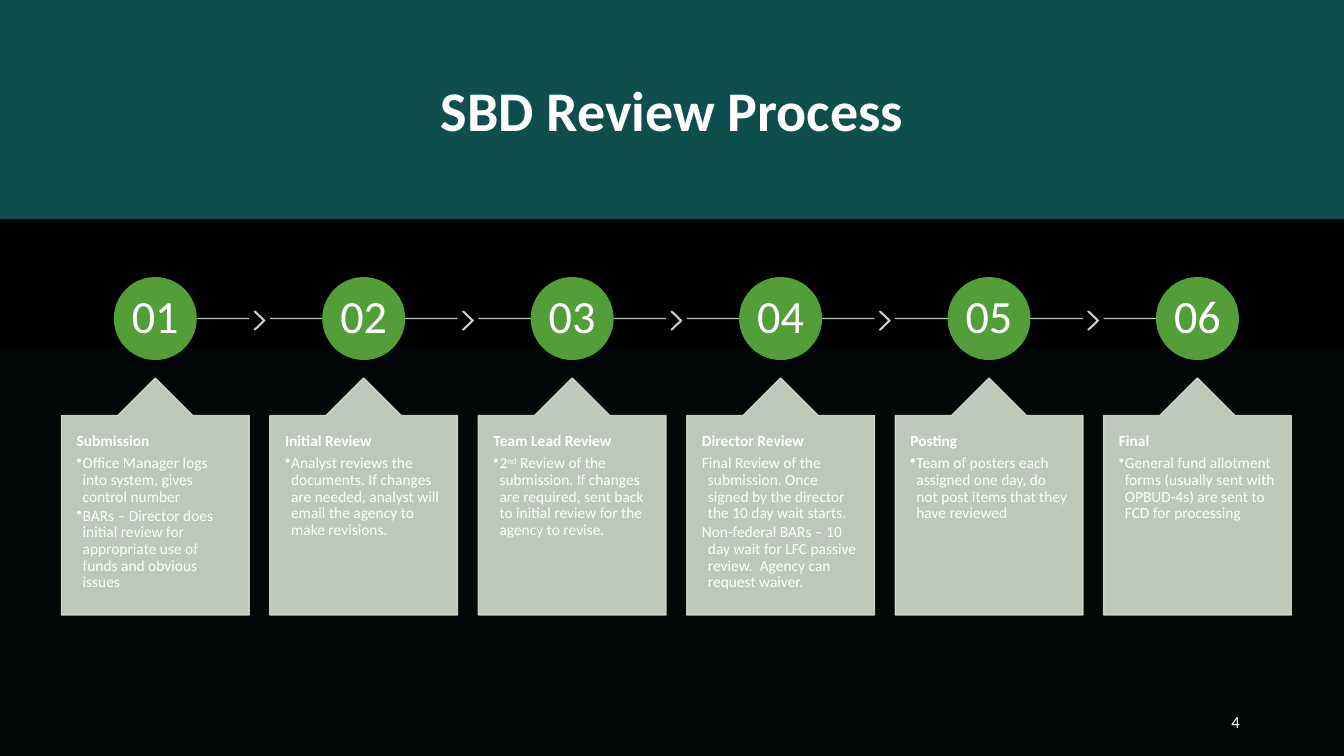
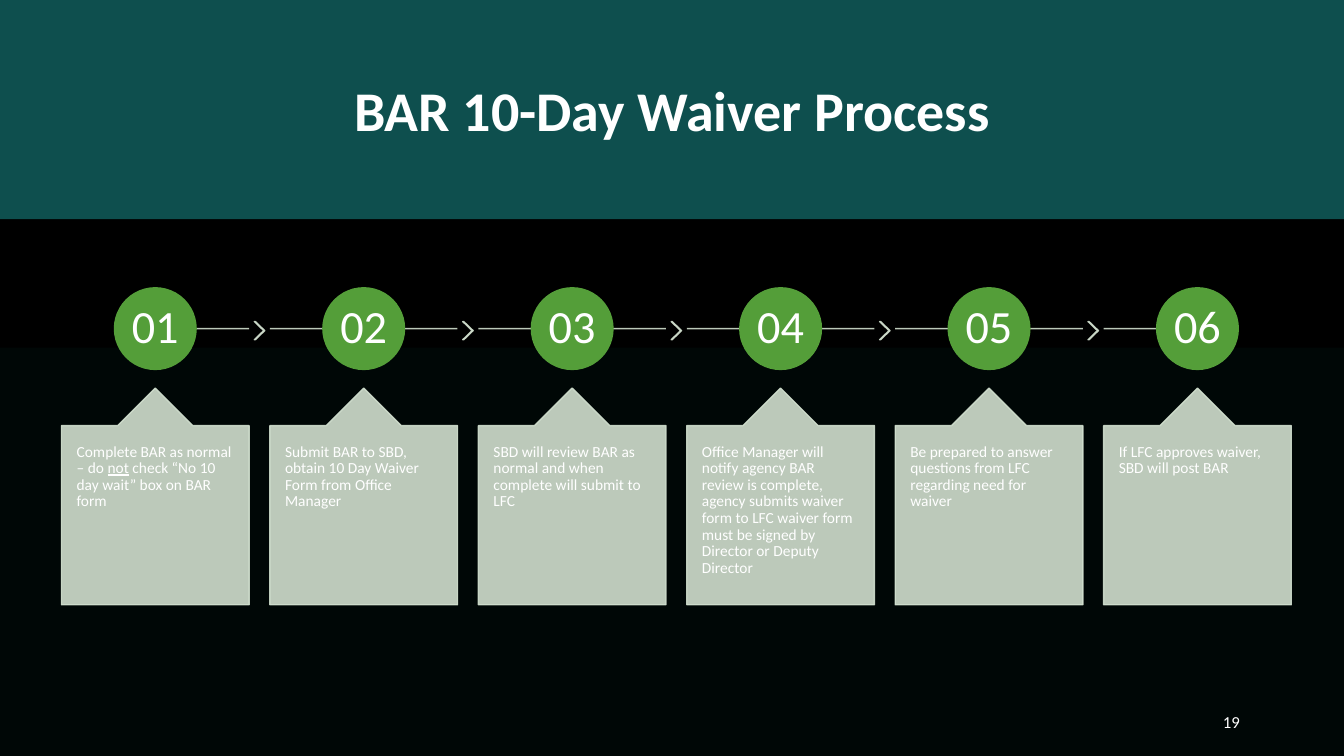
from lxml import etree
from pptx import Presentation
from pptx.dml.color import RGBColor
from pptx.enum.shapes import MSO_CONNECTOR, MSO_SHAPE
from pptx.enum.text import MSO_ANCHOR, PP_ALIGN
from pptx.oxml.ns import qn
from pptx.util import Inches, Pt

RECT, OVAL = MSO_SHAPE.RECTANGLE, MSO_SHAPE.OVAL
CHEVRON, CALLOUT = MSO_SHAPE.CHEVRON, MSO_SHAPE.UP_ARROW_CALLOUT
LINE = MSO_CONNECTOR.STRAIGHT
TOP, MIDDLE = MSO_ANCHOR.TOP, MSO_ANCHOR.MIDDLE
LEFT, CENTER, RIGHT = PP_ALIGN.LEFT, PP_ALIGN.CENTER, PP_ALIGN.RIGHT

FONT = "Calibri"
BLACK, WHITE, TEAL = "000000", "FFFFFF", "0E4F4E"
TINT, GREEN, SAGE = "017058", "549E39", "D1DFCE"

deck = Presentation()
deck.slide_width, deck.slide_height = Inches(13.333), Inches(7.5)
W, H = deck.slide_width, deck.slide_height
COLS = 6
START, END = Inches(0.61), Inches(12.81)
PITCH = (END - START) / (COLS - 0.1)
CARD = 0.9 * PITCH
GAP = PITCH - CARD
DISC = Inches(0.81)


def paint(shape, color, alpha=100, line=True):
    if line:
        shape.line.color.rgb = RGBColor.from_string(color)
        shape.line.width = Pt(1)
    if hasattr(shape, "fill"):
        shape.fill.solid()
        shape.fill.fore_color.rgb = RGBColor.from_string(color)
        shape.shadow.inherit = False
        if not line:
            shape.line.fill.background()
    props = shape._element.spPr
    if alpha < 100:
        for node in props.iter(qn("a:srgbClr")):
            etree.SubElement(node, qn("a:alpha")).set("val", str(alpha * 1000))
    if not hasattr(shape, "fill"):
        etree.SubElement(props, qn("a:effectLst"))


def write(shape, texts, size, align, anchor=MIDDLE, inset=(0.1, 0.05), space=0.9, mark=None):
    frame = shape.text_frame
    frame.word_wrap = True
    frame.vertical_anchor = anchor
    frame.margin_left = frame.margin_right = Inches(inset[0])
    frame.margin_top = frame.margin_bottom = Inches(inset[1])
    frame.text = "\n".join(text.replace("|", "") for text, bold in texts)
    for para, (text, bold) in zip(frame.paragraphs, texts):
        para.alignment = align
        para.line_spacing = space
        if "|" in text:
            para.text = ""
            for place, part in enumerate(text.split("|")):
                run = para.add_run()
                run.text = part
                if place % 2:
                    run.font._element.set(*mark)
        for run in para.runs:
            run.font.name = FONT
            run.font.size = Pt(size)
            run.font.bold = bold
            run.font.color.rgb = RGBColor.from_string(WHITE)


PAGES = [
    ("SBD Review Process", "4", 3.16, ("baseline", "30000"), [
        ("Submission", "•", [
            "Office Manager logs into system, gives control number",
            "BARs – Director does initial review for appropriate use of funds and obvious issues"]),
        ("Initial Review", "•", [
            "Analyst reviews the documents. If changes are needed, analyst will email the agency "
            "to make revisions."]),
        ("Team Lead Review", "•", [
            "2|nd| Review of the submission. If changes are required, sent back to initial review "
            "for the agency to revise."]),
        ("Director Review", "", [
            "Final Review of the submission. Once signed by the director the 10 day wait starts.",
            "Non-federal BARs – 10 day wait for LFC passive review.  Agency can request waiver."]),
        ("Posting", "•", [
            "Team of posters each assigned one day, do not post items that they have reviewed"]),
        ("Final", "•", [
            "General fund allotment forms (usually sent with OPBUD-4s) are sent to FCD for processing"]),
    ]),
    ("BAR 10-Day Waiver Process", "19", 3.26, ("u", "sng"), [
        ("Complete BAR as normal – do |not| check “No 10 day wait” box on BAR form", "", []),
        ("Submit BAR to SBD, obtain 10 Day Waiver Form from Office Manager", "", []),
        ("SBD will review BAR as normal and when complete will submit to LFC", "", []),
        ("Office Manager will notify agency BAR review is complete, agency submits waiver form "
         "to LFC waiver form must be signed by Director or Deputy Director", "", []),
        ("Be prepared to answer questions from LFC regarding need for waiver", "", []),
        ("If LFC approves waiver, SBD will post BAR", "", []),
    ]),
]
BANDS = [(1, TINT, 7), (0.46, BLACK, 100), (0.29, TEAL, 100)]

back = deck.slide_master.background.fill
back.solid()
back.fore_color.rgb = RGBColor.from_string(BLACK)

for title, number, row, mark, steps in PAGES:
    slide = deck.slides.add_slide(deck.slide_layouts[6])
    shapes = slide.shapes
    for share, color, alpha in BANDS:
        paint(shapes.add_shape(RECT, 0, 0, W, int(share * H)), color, alpha, False)

    box = shapes.add_textbox(int(0.05 * W), int(0.05 * H), int(0.9 * W), int(0.2 * H))
    write(box, [(title, True)], 40, CENTER)

    rail = Inches(row)
    top = rail + Inches(0.59)
    base = Inches(9.26) - rail
    for col, (head, bullet, items) in enumerate(steps):
        left = int(START + col * PITCH)
        right = int(left + CARD)
        mid = (left + right) // 2
        last = col == COLS - 1

        track = shapes.add_connector(LINE, left if col else mid, rail, mid if last else right, rail)
        paint(track, SAGE, 90)
        if not last:
            arrow = shapes.add_shape(CHEVRON, int(right + GAP / 4), rail - Inches(0.07),
                                     int(GAP / 2), Inches(0.18))
            arrow.adjustments[0] = 0.9
            paint(arrow, SAGE, 90)

        disc = shapes.add_shape(OVAL, mid - DISC // 2, rail - DISC // 2, DISC, DISC)
        paint(disc, GREEN)
        write(disc, [(f"{col + 1:02}", False)], 33, CENTER, inset=(0.03, 0.03))

        card = shapes.add_shape(CALLOUT, left, top, int(CARD), base - top)
        for place, value in enumerate((0.5, 0.2, 0.2, 1)):
            card.adjustments[place] = value
        paint(card, SAGE, 90)
        texts = [(head, bool(items))] + [(item, False) for item in items]
        write(card, texts, 11, LEFT, TOP, (0.15, 0.18), mark=mark)
        first, *rest = card.text_frame.paragraphs
        first.space_after = Pt(3.85)
        for para in rest:
            para.level = 1
            para.space_after = Pt(1.65)
            props = para._p.get_or_add_pPr()
            props.set("marL", str(Inches(0.06)))
            props.set("indent", str(-Inches(0.06)))
            if bullet:
                etree.SubElement(props, qn("a:buChar")).set("char", bullet)

    box = shapes.add_textbox(int(0.71 * W), int(0.93 * H), int(0.22 * W), int(0.05 * H))
    write(box, [(number, False)], 12, RIGHT, space=1.0)

deck.save("out.pptx")
